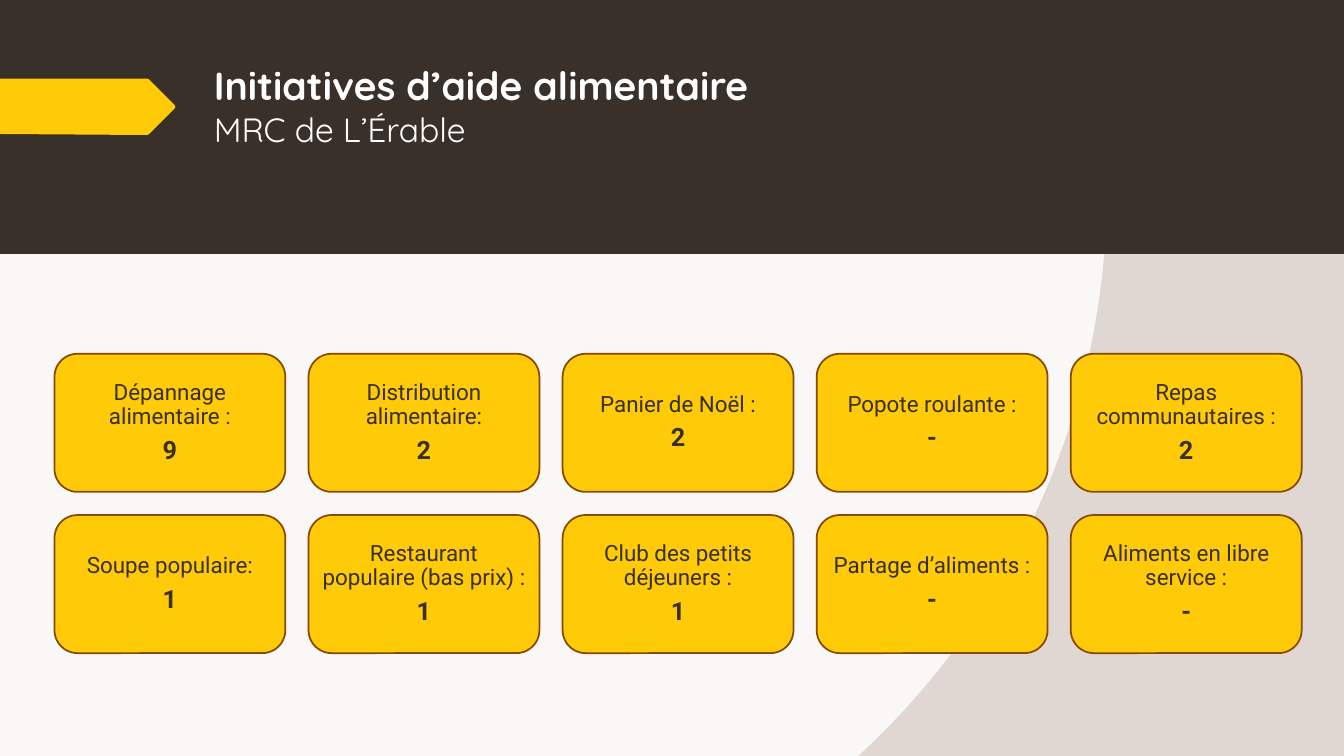
"""Build the slide of food aid initiatives."""
import math

from pptx import Presentation, util as u
from pptx.dml.color import RGBColor
from pptx.enum import shapes, text

WIDE, HIGH = 13.33, 7.5
BAND = 2.52
DARK, GOLD, RUST = "39302A", "FFCA08", "864A04"
PALE, GREY, WHITE = "F9F8F7", "E0D7D3", "FFFFFF"
COLS = 5
LEFT, TOP = 0.54, 3.51
CARD_W, CARD_H = 2.29, 1.37
STEP_X, STEP_Y = 2.52, 1.6
ITEMS = [
    ("Dépannage alimentaire :", "9"),
    ("Distribution alimentaire:", "2"),
    ("Panier de Noël :", "2"),
    ("Popote roulante :", "-"),
    ("Repas communautaires :", "2"),
    ("Soupe populaire:", "1"),
    ("Restaurant populaire (bas prix) :", "1"),
    ("Club des petits déjeuners :", "1"),
    ("Partage d’aliments :", "-"),
    ("Aliments en libre service :", "-"),
]
ARROW = [(0, 0.78), (1.46, 0.78), (1.48, 0.79), (1.73, 1.04), (1.74, 1.06),
         (1.73, 1.08), (1.48, 1.33), (1.46, 1.34), (0, 1.33)]


def paint(fill, tone):
    """Give a fill one solid colour."""
    fill.solid()
    fill.fore_color.rgb = RGBColor.from_string(tone)


def style(font, name, size, tone, bold=False):
    """Set the face, size, colour and weight of a font."""
    font.name, font.size, font.bold = name, u.Pt(size), bold
    font.color.rgb = RGBColor.from_string(tone)


def finish(shape, tone, edge=None):
    """Fill a shape, drop its shadow and draw its edge if it has one."""
    shape.shadow.inherit = False
    paint(shape.fill, tone)
    if edge:
        paint(shape.line.fill, edge)
        shape.line.width = u.Pt(1.25)
    else:
        shape.line.fill.background()


def block(slide, kind, box, tone, edge=None):
    """Add a preset shape in a box given in inches."""
    shape = slide.shapes.add_shape(kind, *map(u.Inches, box))
    finish(shape, tone, edge)
    return shape


def outline(slide, points, tone):
    """Add a closed polygon through points given in inches."""
    start, *rest = [(u.Inches(x), u.Inches(y)) for x, y in points]
    pen = slide.shapes.build_freeform(*start)
    pen.add_line_segments(rest)
    finish(pen.convert_to_shape(), tone)


def curve():
    """Return the area right of a circle centred a quarter into the slide."""
    mid_x, mid_y = WIDE / 4, HIGH / 4
    reach = math.hypot(WIDE, HIGH) / 2
    rows = [BAND + (HIGH - BAND) * n / 60 for n in range(61)]
    arc = [(mid_x + math.sqrt(reach ** 2 - (y - mid_y) ** 2), y) for y in rows]
    return arc + [(WIDE, HIGH), (WIDE, BAND)]


def head(title, main_line, sub_line):
    """Place the title and write its two lines."""
    title.left, title.top = u.Inches(2.02), u.Inches(0.56)
    title.width, title.height = u.Inches(10.26), u.Inches(1.59)
    frame = title.text_frame
    frame.auto_size = text.MSO_AUTO_SIZE.NONE
    frame.vertical_anchor = text.MSO_ANCHOR.TOP
    para = frame.paragraphs[0]
    para.alignment = text.PP_ALIGN.LEFT
    first = para.add_run()
    first.text = main_line
    para.add_line_break()
    second = para.add_run()
    second.text = sub_line
    style(first.font, "Quicksand", 28, WHITE, True)
    style(second.font, "Quicksand", 24, WHITE)


def card(slide, spot, label, count):
    """Add one rounded card with a label and its count."""
    row, col = divmod(spot, COLS)
    box = LEFT + col * STEP_X, TOP + row * STEP_Y, CARD_W, CARD_H
    shape = block(slide, shapes.MSO_SHAPE.ROUNDED_RECTANGLE, box, GOLD, RUST)
    frame = shape.text_frame
    frame.word_wrap = True
    frame.vertical_anchor = text.MSO_ANCHOR.MIDDLE
    frame.margin_left = frame.margin_right = u.Inches(0.07)
    frame.margin_top = frame.margin_bottom = u.Inches(0.07)
    frame.text = f"{label}\n{count}"
    for para, size, bold in zip(frame.paragraphs, (16, 18), (False, True)):
        para.alignment = text.PP_ALIGN.CENTER
        para.line_spacing = 0.9
        style(para.font, "Roboto", size, DARK, bold)
    frame.paragraphs[0].space_after = u.Pt(5.6)


def main():
    """Build and save the slide."""
    deck = Presentation()
    deck.slide_width, deck.slide_height = u.Inches(WIDE), u.Inches(HIGH)
    slide = deck.slides.add_slide(deck.slide_layouts[5])
    paint(slide.background.fill, PALE)
    outline(slide, curve(), GREY)
    block(slide, shapes.MSO_SHAPE.RECTANGLE, (0, 0, WIDE, BAND), DARK)
    title = slide.shapes.title
    slide.shapes.element.append(title.element)
    head(title, "Initiatives d’aide alimentaire", "MRC de L’Érable")
    outline(slide, ARROW, GOLD)
    for spot, item in enumerate(ITEMS):
        card(slide, spot, *item)
    deck.save("out.pptx")


if __name__ == "__main__":
    main()
